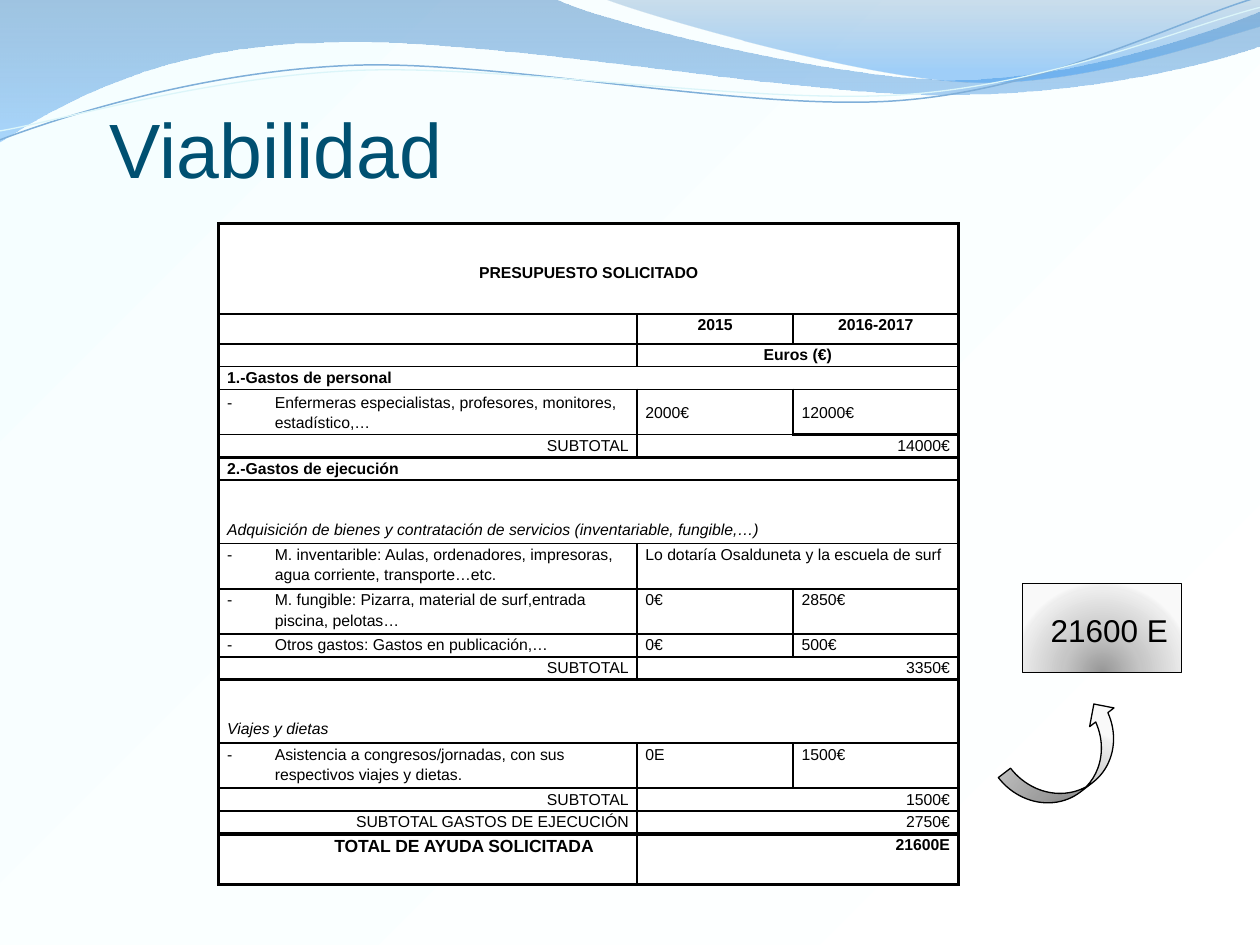
from dataclasses import dataclass, field
from typing import Any, Optional

from lxml import etree
from pptx import Presentation
from pptx.dml.color import RGBColor
from pptx.enum.shapes import MSO_SHAPE
from pptx.enum.text import MSO_ANCHOR, PP_ALIGN
from pptx.oxml import parse_xml
from pptx.oxml.ns import nsdecls, qn
from pptx.util import Cm, Pt

LEFT, CENTER, RIGHT = PP_ALIGN.LEFT, PP_ALIGN.CENTER, PP_ALIGN.RIGHT
TOP, MIDDLE = MSO_ANCHOR.TOP, MSO_ANCHOR.MIDDLE
RECTANGLE, CURVED_ARROW = MSO_SHAPE.RECTANGLE, MSO_SHAPE.CURVED_UP_ARROW

BLACK = RGBColor(0x00, 0x00, 0x00)
WHITE = RGBColor(0xFF, 0xFF, 0xFF)
TITLE_BLUE = RGBColor(0x00, 0x50, 0x71)
PALE_CYAN = RGBColor(0xF5, 0xFE, 0xFF)
WAVE_DARK, WAVE_LIGHT = RGBColor(0x37, 0x7E, 0xBE), RGBColor(0x69, 0xB5, 0xF9)
CREST_DARK, CREST_LIGHT = RGBColor(0x5F, 0x93, 0xC1), RGBColor(0x34, 0x96, 0xF1)
LINE_BLUE, LINE_PALE = RGBColor(0x7F, 0xAF, 0xD9), RGBColor(0xDB, 0xF5, 0xF9)
GRAYS = [RGBColor(level, level, level) for level in (0x97, 0xC6, 0xEE, 0xF9)]

FONT = "Arial"
THIN, MEDIUM, THICK = 1, 1.5, 2.25
COLUMN_WIDTHS = (8.43, 3.15, 3.33)
SINGLE, DOUBLE, SECTION = 0.46, 0.91, 1.28
DROP = 0.77

DOWNWARD = '<a:lin ang="5400000" scaled="0"/>'
TO_TOP_LEFT = '<a:lin ang="13500000" scaled="0"/>'
FROM_BELOW = ('<a:path path="circle"><a:fillToRect l="50000" t="130000" '
              'r="50000" b="-30000"/></a:path>')


@dataclass
class Stop:
    position: int
    color: RGBColor
    opacity: int = 100


@dataclass
class Wave:
    start: tuple
    segments: list
    stops: list = field(default_factory=list)
    line: Optional[RGBColor] = None
    width: float = 0.75


@dataclass
class Entry:
    text: str = ""
    span: int = 1
    drop: float = 0
    anchor: Any = TOP
    style: dict = field(default_factory=dict)


@dataclass
class Row:
    height: float
    entries: list
    rule: float = THIN
    last_rule: Optional[float] = None


def heading(text: str, span: int = 3, **style: Any) -> Entry:
    return Entry(text, span, style={"bold": True, **style})


def section(text: str) -> Row:
    return Row(SECTION, [Entry(text, 3, DROP, style={"italic": True})])


def item(text: str, *values: str, height: float = DOUBLE, anchor: Any = TOP,
         last_rule: Optional[float] = None) -> Row:
    span = 3 - len(values)
    entries = [Entry(text, anchor=anchor, style={"bullet": True})]
    entries += [Entry(value, span, anchor=anchor) for value in values]
    return Row(height, entries, last_rule=last_rule)


def subtotal(label: str, value: str, rule: float) -> Row:
    right = {"align": RIGHT}
    return Row(SINGLE, [Entry(label, style=right), Entry(value, 2, style=right)], rule)


BUDGET = [
    Row(1.82, [Entry("PRESUPUESTO SOLICITADO", 3, DROP, style={"bold": True, "align": CENTER})]),
    Row(0.6, [Entry(), heading("2015", 1, align=CENTER), heading("2016-2017", 1, align=CENTER)]),
    Row(SINGLE, [Entry(), heading("Euros (€)", 2, align=CENTER)]),
    Row(SINGLE, [heading("1.-Gastos de personal")]),
    item("Enfermeras especialistas, profesores, monitores, estadístico,…", "2000€", "12000€",
         anchor=MIDDLE, last_rule=MEDIUM),
    subtotal("SUBTOTAL", "14000€", THICK),
    Row(SINGLE, [heading("2.-Gastos de ejecución")], MEDIUM),
    section("Adquisición de bienes y contratación de servicios (inventariable, fungible,…)"),
    item("M. inventarible: Aulas, ordenadores, impresoras, agua corriente, transporte…etc.",
         "Lo dotaría Osalduneta y la escuela de surf"),
    item("M. fungible: Pizarra, material de surf,entrada piscina, pelotas…", "0€", "2850€"),
    item("Otros gastos: Gastos en publicación,…", "0€", "500€", height=SINGLE, last_rule=MEDIUM),
    subtotal("SUBTOTAL", "3350€", MEDIUM),
    section("Viajes y dietas"),
    item("Asistencia a congresos/jornadas, con sus respectivos viajes y dietas.", "0E", "1500€",
         last_rule=MEDIUM),
    subtotal("SUBTOTAL", "1500€", MEDIUM),
    subtotal("SUBTOTAL GASTOS DE EJECUCIÓN", "2750€", THICK),
    Row(1.02, [heading("TOTAL DE AYUDA SOLICITADA", 1, size=10, indent=2.16),
               heading("21600E", 2, align=RIGHT)], THICK),
]

WAVES = [
    Wave((0, -0.03), [(11.18, -0.03), (12.09, 0.43, 16.87, 1.6, 19.25, 1.6),
                      (21.67, 1.6, 24.33, 0.66, 25.4, 0.23), (25.43, 0.91),
                      (24.97, 1.12, 22.1, 1.93, 18.95, 1.91), (15.8, 1.91, 9.7, 0.71, 6.53, 0.86),
                      (3.28, 0.89, 1.17, 2.11, -0.03, 2.87)],
         [Stop(0, WAVE_DARK, 45), Stop(100, WAVE_LIGHT, 55)]),
    Wave((12.17, -0.03), [(12.93, 0.28, 17.32, 1.57, 19.53, 1.65),
                          (21.74, 1.75, 24.41, 0.81, 25.4, 0.53), (25.4, 0)],
         [Stop(0, CREST_DARK, 30), Stop(80, CREST_LIGHT, 45)]),
    Wave((0, 2.82), [(1.22, 2.36, 4.01, 1.45, 7.04, 1.32), (10.03, 1.19, 15.06, 2.26, 18.11, 2.03),
                     (21.16, 1.8, 23.83, 0.38, 25.35, -0.05)], line=LINE_BLUE, width=0.85),
    Wave((0, 2.64), [(1.19, 2.44, 4.17, 1.55, 7.19, 1.42), (10.24, 1.3, 15.16, 2.11, 18.21, 1.91),
                     (21.23, 1.7, 23.9, 0.53, 25.4, 0.15)], line=LINE_PALE),
]


def write_text(frame: Any, text: str, *, size: float = 9, color: RGBColor = BLACK,
               bold: bool = False, italic: bool = False, align: Any = LEFT, spacing: float = 1,
               bullet: bool = False, indent: float = 0) -> None:
    paragraph = frame.paragraphs[0]
    paragraph.alignment, paragraph.line_spacing = align, spacing
    properties = paragraph._p.get_or_add_pPr()
    if bullet:
        properties.set("marL", str(Cm(0.96)))
        properties.set("indent", str(-Cm(0.96)))
        etree.SubElement(properties, qn("a:buFont")).set("typeface", FONT)
        etree.SubElement(properties, qn("a:buChar")).set("char", "-")
    elif indent:
        properties.set("marL", str(Cm(indent)))
    if not text:
        etree.SubElement(paragraph._p, qn("a:endParaRPr")).set("sz", str(size * 100))
        return
    run = paragraph.add_run()
    run.text = text
    run.font.name, run.font.size = FONT, Pt(size)
    run.font.bold, run.font.italic = bold, italic
    run.font.color.rgb = color


def paint_gradient(fill: Any, element: Any, stops: list, direction: str) -> None:
    fill.solid()
    solid = element.find(".//" + qn("a:solidFill"))
    marks = "".join(
        f'<a:gs pos="{stop.position * 1000}"><a:srgbClr val="{stop.color}">'
        f'<a:alpha val="{stop.opacity * 1000}"/></a:srgbClr></a:gs>' for stop in stops)
    solid.getparent().replace(solid, parse_xml(
        f'<a:gradFill {nsdecls("a")} rotWithShape="1"><a:gsLst>{marks}</a:gsLst>'
        f'{direction}</a:gradFill>'))


def bend_segments(shape: Any, segments: list) -> None:
    steps = iter(shape.element.findall(".//" + qn("a:lnTo")))
    for segment in segments:
        step = next(steps)
        if len(segment) == 2:
            continue
        curve = etree.Element(qn("a:cubicBezTo"))
        step.addprevious(curve)
        for corner in (step, next(steps), next(steps)):
            curve.append(corner[0])
            corner.getparent().remove(corner)


def draw_wave(slide: Any, wave: Wave) -> None:
    vertices = [(Cm(x), Cm(y)) for segment in wave.segments
                for x, y in zip(segment[::2], segment[1::2])]
    builder = slide.shapes.build_freeform(*map(Cm, wave.start))
    builder.add_line_segments(vertices, close=bool(wave.stops))
    shape = builder.convert_to_shape()
    bend_segments(shape, wave.segments)
    shape.shadow.inherit = False
    if wave.stops:
        paint_gradient(shape.fill, shape.element.spPr, wave.stops, DOWNWARD)
        shape.line.fill.background()
    else:
        shape.fill.background()
        shape.line.color.rgb, shape.line.width = wave.line, Pt(wave.width)


def draw_borders(cell: Any, **widths: float) -> None:
    properties = cell._tc.get_or_add_tcPr()
    for index, (side, width) in enumerate(widths.items()):
        properties.insert(index, parse_xml(
            f'<a:ln{side} {nsdecls("a")} w="{Pt(width)}"><a:solidFill>'
            f'<a:srgbClr val="{BLACK}"/></a:solidFill></a:ln{side}>'))


def draw_budget(slide: Any, rows: list) -> None:
    table = slide.shapes.add_table(len(rows), len(COLUMN_WIDTHS), Cm(4.41), Cm(4.51),
                                   Cm(sum(COLUMN_WIDTHS)), Cm(sum(r.height for r in rows))).table
    table.first_row = table.horz_banding = False
    for column, width in zip(table.columns, COLUMN_WIDTHS):
        column.width = Cm(width)
    top = THICK
    for index, row in enumerate(rows):
        table.rows[index].height = Cm(row.height)
        first = 0
        for entry in row.entries:
            last = first + entry.span - 1
            at_end = last == len(COLUMN_WIDTHS) - 1
            for position in range(first, last + 1):
                cell = table.cell(index, position)
                cell.fill.solid()
                cell.fill.fore_color.rgb = WHITE
                cell.margin_left = cell.margin_right = Cm(0.17)
                cell.margin_top, cell.margin_bottom = Cm(entry.drop), Cm(0)
                cell.vertical_anchor = entry.anchor
                write_text(cell.text_frame, entry.text if position == first else "",
                           spacing=1.15, **entry.style)
            cell = table.cell(index, first)
            if entry.span > 1:
                cell.merge(table.cell(index, last))
            bottom = row.last_rule if at_end and row.last_rule else row.rule
            draw_borders(cell, L=THIN if first else THICK, R=THICK if at_end else THIN,
                         T=top, B=bottom)
            first = last + 1
        top = row.rule


def draw_gray_shape(slide: Any, kind: Any, box: tuple, rotation: float = 0) -> None:
    shape = slide.shapes.add_shape(kind, *map(Cm, box))
    shape.rotation = rotation
    stops = [Stop(position, gray) for position, gray in zip((0, 43, 93, 100), GRAYS)]
    paint_gradient(shape.fill, shape.element.spPr, stops, FROM_BELOW)
    shape.line.color.rgb, shape.line.width = BLACK, Pt(0.75)
    shape.shadow.inherit = False


def draw_label(slide: Any, text: str, box: tuple, wrap: bool = True, **style: Any) -> None:
    frame = slide.shapes.add_textbox(*map(Cm, box)).text_frame
    frame.word_wrap = wrap
    write_text(frame, text, **style)


def main() -> None:
    presentation = Presentation()
    presentation.slide_width, presentation.slide_height = Cm(25.4), Cm(19.05)
    slide = presentation.slides.add_slide(presentation.slide_layouts[6])
    paint_gradient(slide.background.fill, slide.element,
                   [Stop(0, WHITE), Stop(100, PALE_CYAN)], TO_TOP_LEFT)
    for wave in WAVES:
        draw_wave(slide, wave)
    draw_label(slide, "Viabilidad", (1.96, 1.93, 7.29, 2.13), wrap=False,
               size=44, color=TITLE_BLUE)
    draw_budget(slide, BUDGET)
    draw_gray_shape(slide, RECTANGLE, (20.62, 11.76, 3.2, 1.8))
    draw_label(slide, "21600 E", (20.93, 12.19, 3.2, 1.02), size=18)
    draw_gray_shape(slide, CURVED_ARROW, (20.22, 14.71, 2.74, 1.24), rotation=322.4)
    presentation.save("out.pptx")


if __name__ == "__main__":
    main()
